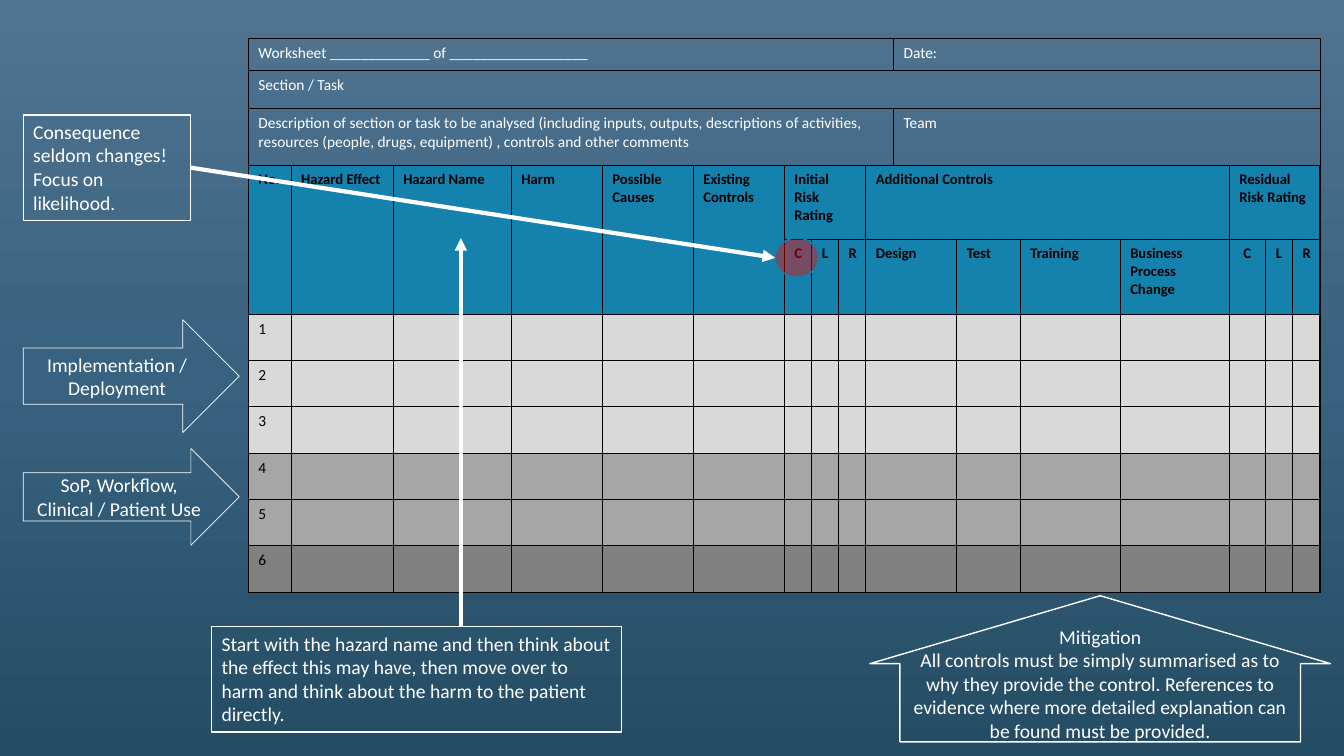
import copy

import pptx
import pptx.dml.color
import pptx.enum.shapes
import pptx.enum.text
import pptx.oxml
import pptx.oxml.ns
import pptx.util

Pt = pptx.util.Pt
RGBColor = pptx.dml.color.RGBColor
SHAPE = pptx.enum.shapes.MSO_SHAPE
ALIGN = pptx.enum.text.PP_ALIGN
ANCHOR = pptx.enum.text.MSO_ANCHOR

WHITE = RGBColor(0xFF, 0xFF, 0xFF)
BLACK = RGBColor(0, 0, 0)
RED = RGBColor(0xFF, 0, 0)
HEADER_BLUE = RGBColor(0x14, 0x82, 0xAC)
RING_BLUE = RGBColor(0x15, 0x80, 0xA9)
LIGHT_GREY = RGBColor(0xD9, 0xD9, 0xD9)
MID_GREY = RGBColor(0xA6, 0xA6, 0xA6)
DARK_GREY = RGBColor(0x80, 0x80, 0x80)
BACKGROUND = [
    (0, RGBColor(0x51, 0x74, 0x91)),
    (0.5, RGBColor(0x38, 0x62, 0x7F)),
    (1, RGBColor(0x24, 0x4C, 0x64)),
]
FONT = "Calibri"
NS = pptx.oxml.ns.nsdecls("a")
BLACK_LINE = '<a:solidFill><a:srgbClr val="000000"/></a:solidFill>'
NO_LINE = "<a:noFill/>"


def add_grid(left, top, widths, heights, open_sides=()):
    """Add an unstyled table, bordered in black except at (row, column, side) in open_sides."""
    frame = s.shapes.add_table(
        len(heights), len(widths), Pt(left), Pt(top), Pt(sum(widths)), Pt(sum(heights))
    )
    table = frame.table
    table.first_row = table.horz_banding = False
    for col, width in zip(table.columns, widths):
        col.width = Pt(width)
    for row, height in zip(table.rows, heights):
        row.height = Pt(height)
    for i in range(len(heights)):
        for j in range(len(widths)):
            tcPr = table.cell(i, j)._tc.get_or_add_tcPr()
            for side in ("lnL", "lnR", "lnT", "lnB"):
                paint = NO_LINE if (i, j, side) in open_sides else BLACK_LINE
                tcPr.append(pptx.oxml.parse_xml(
                    f'<a:{side} {NS} w="12700">{paint}</a:{side}>'))
    return table


def set_font(p, size, color, bold=False):
    p.font.name = FONT
    p.font.size = Pt(size)
    p.font.color.rgb = color
    p.font.bold = bold


prs = pptx.Presentation()
prs.slide_width, prs.slide_height = Pt(960), Pt(540)
s = prs.slides.add_slide(prs.slide_layouts[6])

# Background gradient
fill = s.background.fill
fill.gradient()
fill.gradient_angle = 270
stops = s._element.xpath(".//a:gsLst")[0]
stops.insert(1, copy.deepcopy(stops[0]))
for stop, (position, color) in zip(fill.gradient_stops, BACKGROUND):
    stop.position = position
    stop.color.rgb = color

# Worksheet details
details = add_grid(177.4, 27.4, [460.8, 305], [23, 26.9, 53.2],
                   open_sides=[(1, 0, "lnR"), (1, 1, "lnL")])
DETAILS = {
    (0, 0): "Worksheet _____________ of __________________",
    (0, 1): "Date:",
    (1, 0): "Section / Task",
    (2, 0): "Description of section or task to be analysed (including inputs, outputs, "
            "descriptions of activities, resources (people, drugs, equipment) , "
            "controls and other comments",
    (2, 1): "Team",
}
for (row, col), text in DETAILS.items():
    details.cell(row, col).text = text
for cell in details.iter_cells():
    cell.fill.background()
    set_font(cell.text_frame.paragraphs[0], 11, WHITE)

# Hazard log
hazards = add_grid(
    177.4, 118.3,
    [30.6, 72.9, 84.4] + [65] * 3 + [19.4] * 3 + [65, 45.4, 71.4, 77.9, 25.8, 19.5, 19.6],
    [53, 53.2] + [33.1] * 6,
)
TALL_HEADERS = ["No.", "Hazard Effect", "Hazard Name", "Harm",
                "Possible Causes", "Existing Controls"]
WIDE_HEADERS = [(6, 8, "Initial Risk Rating"), (9, 12, "Additional Controls"),
                (13, 15, "Residual Risk Rating")]
SUBHEADERS = ["C", "L", "R", "Design", "Test", "Training",
              "Business Process Change", "C", "L", "R"]
ROW_FILLS = [HEADER_BLUE] * 2 + [LIGHT_GREY] * 3 + [MID_GREY] * 2 + [DARK_GREY]

for col, text in enumerate(TALL_HEADERS):
    hazards.cell(0, col).merge(hazards.cell(1, col))
    hazards.cell(0, col).text = text
for first, last, text in WIDE_HEADERS:
    hazards.cell(0, first).merge(hazards.cell(0, last))
    hazards.cell(0, first).text = text
for col, text in enumerate(SUBHEADERS, start=6):
    cell = hazards.cell(1, col)
    cell.text = text
    if len(text) == 1:
        cell.text_frame.paragraphs[0].alignment = ALIGN.CENTER
for number in range(1, 7):
    hazards.cell(number + 1, 0).text = str(number)
for row, color in enumerate(ROW_FILLS):
    header = row < 2
    for cell in hazards.rows[row].cells:
        cell.fill.solid()
        cell.fill.fore_color.rgb = color
        set_font(cell.text_frame.paragraphs[0], 10.5 if header else 11, BLACK, header)

# Callouts: shape, box, line width, paragraphs
CALLOUTS = [
    (SHAPE.RIGHT_ARROW, (16.6, 228.4, 154.3, 80.6), 0.5,
     ["Implementation / Deployment"]),
    (SHAPE.RIGHT_ARROW, (16.6, 320.4, 154.3, 69.1), 0.5,
     ["SoP, Workflow, Clinical / Patient Use"]),
    (SHAPE.UP_ARROW, (621.4, 425.5, 329, 104.4), 1,
     ["Mitigation",
      "All controls must be simply summarised as to why they provide the control. "
      "References to evidence where more detailed explanation can be found must be "
      "provided."]),
    (SHAPE.RECTANGLE, (16.6, 82.1, 119.5, 75.3), 1,
     ["Consequence seldom changes! Focus on likelihood."]),
    (SHAPE.RECTANGLE, (151.2, 447.6, 293, 75.3), 1,
     ["Start with the hazard name and then think about the effect this may have, then "
      "move over to harm and think about the harm to the patient directly.\u00a0".strip()]),
]
callouts = []
for kind, box, line_width, texts in CALLOUTS:
    sp = s.shapes.add_shape(kind, *map(Pt, box))
    sp.shadow.inherit = False
    sp.fill.background()
    sp.line.color.rgb = WHITE
    sp.line.width = Pt(line_width)
    boxed = kind == SHAPE.RECTANGLE
    tf = sp.text_frame
    tf.word_wrap = True
    tf.vertical_anchor = ANCHOR.TOP if boxed else ANCHOR.MIDDLE
    tf.text = "\n".join(texts)
    for p in tf.paragraphs:
        p.alignment = ALIGN.LEFT if boxed else ALIGN.CENTER
        set_font(p, 14, WHITE)
    callouts.append(sp)
implementation, workflow, mitigation, consequence, hazard_name = callouts
mitigation.adjustments[0] = 0.87
mitigation.adjustments[1] = 0.465
mitigation.text_frame.margin_bottom = Pt(25)

# Highlight on the initial consequence rating
sp = s.shapes.add_shape(SHAPE.OVAL, Pt(553.7), Pt(169.9), Pt(31), Pt(28.1))
sp.shadow.inherit = False
sp.fill.solid()
sp.fill.fore_color.rgb = RED
color = sp._element.spPr.xpath("./a:solidFill/a:srgbClr")[0]
color.append(pptx.oxml.parse_xml(f'<a:alpha {NS} val="42000"/>'))
sp.line.color.rgb = RING_BLUE
sp.line.width = Pt(1)

# Pointers from the boxes into the hazard log
pointers = []
for ends in [(136.1, 119.75, 553.7, 184.2), (329.2, 447.6, 329.2, 170.1)]:
    line = s.shapes.add_connector(
        pptx.enum.shapes.MSO_CONNECTOR.STRAIGHT, *map(Pt, ends))
    line.line.color.rgb = WHITE
    line.line.width = Pt(3)
    line.line._get_or_add_ln().append(
        pptx.oxml.parse_xml(f'<a:tailEnd {NS} type="triangle"/>'))
    line._element.spPr.append(pptx.oxml.parse_xml(f"<a:effectLst {NS}/>"))
    pointers.append(line)
pointers[0].begin_connect(consequence, 3)

prs.save("out.pptx")
